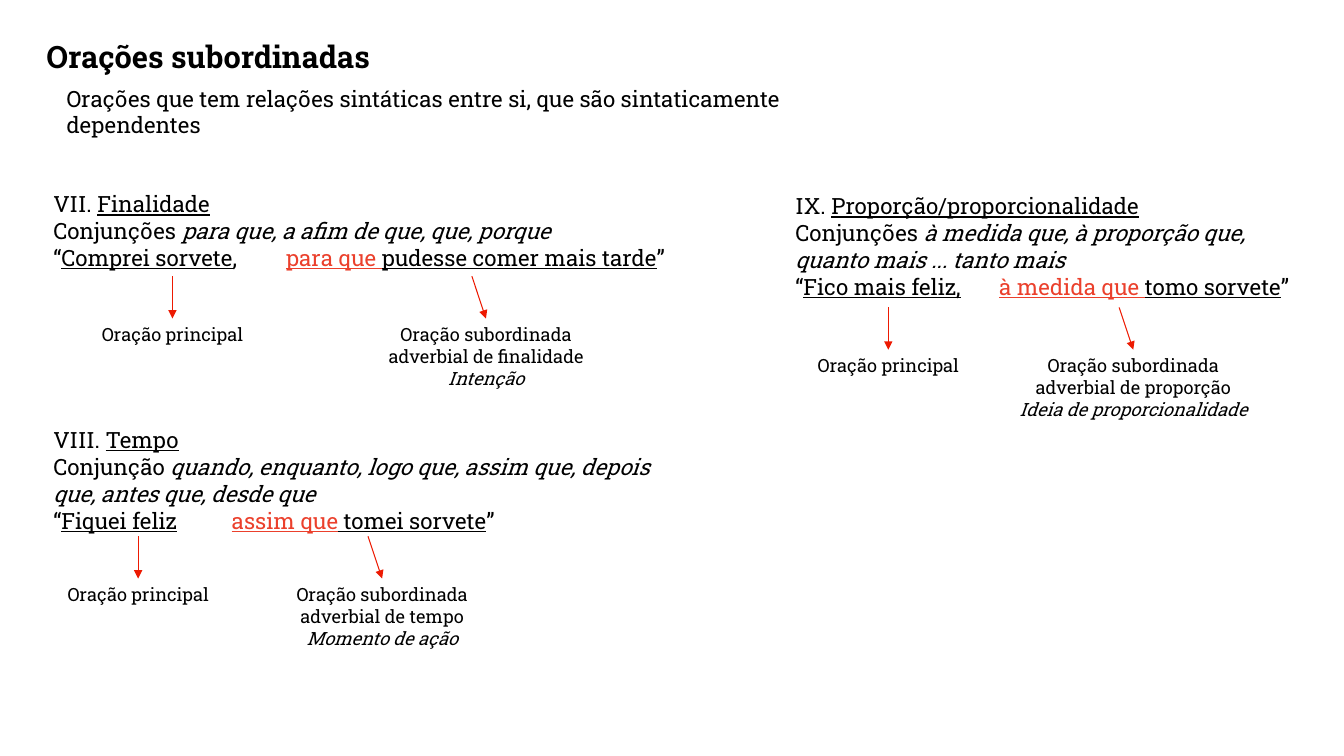
"""Build a slide on Portuguese subordinate clauses with annotated examples."""
from dataclasses import dataclass

from lxml import etree
from pptx import Presentation
from pptx.dml.color import RGBColor
from pptx.enum.shapes import MSO_CONNECTOR
from pptx.enum.text import MSO_ANCHOR, MSO_AUTO_SIZE, PP_ALIGN
from pptx.oxml.ns import qn
from pptx.util import Inches, Pt

STRAIGHT = MSO_CONNECTOR.STRAIGHT
TOP = MSO_ANCHOR.TOP
NO_FIT = MSO_AUTO_SIZE.NONE
LEFT, CENTER = PP_ALIGN.LEFT, PP_ALIGN.CENTER

FONT = "Roboto Slab"
COLORS = {"text": "000000", "conjunction": "EB402C", "arrow": "ED1A02"}
ARROW_DROP, ARROW_SLANT = 0.42, 0.14
MAIN_WIDTH, SUB_WIDTH = 2.29, 2.56


@dataclass(frozen=True)
class Piece:
    text: str
    underline: bool = False
    italic: bool = False
    color: str = "text"


@dataclass(frozen=True)
class Clause:
    number: str
    name: str
    box: tuple[float, float, float, float]
    heading: str
    conjunctions: str
    main: str
    gap: str
    tab: float
    conjunction: str
    ending: str
    arrow_top: float
    main_x: float
    sub_x: float
    label: str
    meaning: str


CLAUSES = [
    Clause("VII. ", "Finalidade", (0.43, 1.84, 6.38, 0.91), "Conjunções ",
           "para que, a afim de que, que, porque", "Comprei sorvete", ",\t", 2.31,
           "para que ", "pudesse comer mais tarde", 2.74, 1.71, 4.68,
           "Oração subordinada adverbial de finalidade", "Intenção"),
    Clause("VIII. ", "Tempo", (0.43, 4.18, 6.55, 1.18), "Conjunção ",
           "quando, enquanto, logo que, assim que, depois que, antes que, desde que",
           "Fiquei feliz", "\t", 1.77, "assim que", " tomei sorvete", 5.32, 1.37, 3.65,
           "Oração subordinada adverbial de tempo", "Momento de ação"),
    Clause("IX. ", "Proporção/proporcionalidade", (7.79, 1.86, 5.36, 1.18), "Conjunções ",
           "à medida que, à proporção que, quanto mais ... tanto mais",
           "Fico mais feliz,", "\t", 2.02, "à medida que ", "tomo sorvete", 3.05, 8.81, 11.1,
           "Oração subordinada adverbial de proporção", "Ideia de proporcionalidade"),
]


def format_run(r, size: float, piece: Piece, bold: bool = False) -> None:
    """Apply the slide's type style to one run."""
    font = r.font
    font.name, font.size, font.bold = FONT, Pt(size), bold
    font.italic, font.underline = piece.italic, piece.underline
    font.color.rgb = RGBColor.from_string(COLORS[piece.color])


def fill_placeholder(sp, box: tuple[float, ...], text: str, size: float, bold: bool) -> None:
    """Move a placeholder and give it one left-aligned paragraph."""
    sp.left, sp.top, sp.width, sp.height = (Inches(v) for v in box)
    tf = sp.text_frame
    tf.text = text
    tf.word_wrap, tf.auto_size, tf.vertical_anchor = True, NO_FIT, TOP
    p = tf.paragraphs[0]
    p.alignment, p.space_before = LEFT, Pt(0)
    pPr = p._p.get_or_add_pPr()
    pPr.set("marL", "0")
    pPr.set("indent", "0")
    etree.SubElement(pPr, qn("a:buNone"))
    format_run(p.runs[0], size, Piece(text), bold)


def add_text(s, box: tuple[float, ...], lines: list[list[Piece]], size: float, align):
    """Add a wrapping text box and return its paragraphs."""
    tf = s.shapes.add_textbox(*(Inches(v) for v in box)).text_frame
    tf.word_wrap = True
    for i, pieces in enumerate(lines):
        p = tf.add_paragraph() if i else tf.paragraphs[0]
        p.alignment = align
        for piece in pieces:
            r = p.add_run()
            r.text = piece.text
            format_run(r, size, piece)
    return tf.paragraphs


def add_arrow(s, x: float, y: float, slant: float) -> None:
    """Add a thin arrow pointing down from an example to its label."""
    line = s.shapes.add_connector(STRAIGHT, Inches(x), Inches(y),
                                  Inches(x + slant), Inches(y + ARROW_DROP))
    line.line.color.rgb = RGBColor.from_string(COLORS["arrow"])
    line.line.width = Pt(0.75)
    etree.SubElement(line.line._get_or_add_ln(), qn("a:tailEnd"), type="triangle")
    etree.SubElement(line._element.spPr, qn("a:effectLst"))


def add_label(s, x: float, y: float, width: float, lines: list[list[Piece]]) -> None:
    """Add a label centred under an arrow tip."""
    height = 0.32 if len(lines) == 1 else 0.76
    add_text(s, (x - width / 2, y, width, height), lines, 13, CENTER)


def add_clause(s, clause: Clause) -> None:
    """Add a clause type with its example, arrows and labels."""
    lines = [
        [Piece(clause.number), Piece(clause.name, underline=True)],
        [Piece(clause.heading), Piece(clause.conjunctions, italic=True)],
        [Piece("“"), Piece(clause.main, underline=True), Piece(clause.gap),
         Piece(clause.conjunction, underline=True, color="conjunction"),
         Piece(clause.ending, underline=True), Piece("”")],
    ]
    example = add_text(s, clause.box, lines, 16, LEFT)[-1]
    tabs = etree.SubElement(example._p.get_or_add_pPr(), qn("a:tabLst"))
    etree.SubElement(tabs, qn("a:tab"), pos=str(Inches(clause.tab)), algn="l")

    label_top = clause.arrow_top + ARROW_DROP
    add_arrow(s, clause.main_x, clause.arrow_top, 0)
    add_label(s, clause.main_x, label_top, MAIN_WIDTH, [[Piece("Oração principal")]])
    add_arrow(s, clause.sub_x, clause.arrow_top, ARROW_SLANT)
    add_label(s, clause.sub_x + ARROW_SLANT, label_top, SUB_WIDTH,
              [[Piece(clause.label)], [Piece(clause.meaning, italic=True)]])


def main() -> None:
    """Create and save the presentation."""
    prs = Presentation()
    prs.slide_width, prs.slide_height = Inches(13.33), Inches(7.5)
    s = prs.slides.add_slide(prs.slide_layouts[1])
    fill_placeholder(s.shapes.title, (0.36, 0.32, 3.8, 0.47), "Orações subordinadas", 22, True)
    fill_placeholder(s.placeholders[1], (0.56, 0.79, 8.59, 0.64),
                     "Orações que tem relações sintáticas entre si, "
                     "que são sintaticamente dependentes", 16, False)
    for clause in CLAUSES:
        add_clause(s, clause)
    prs.save("out.pptx")


if __name__ == "__main__":
    main()
